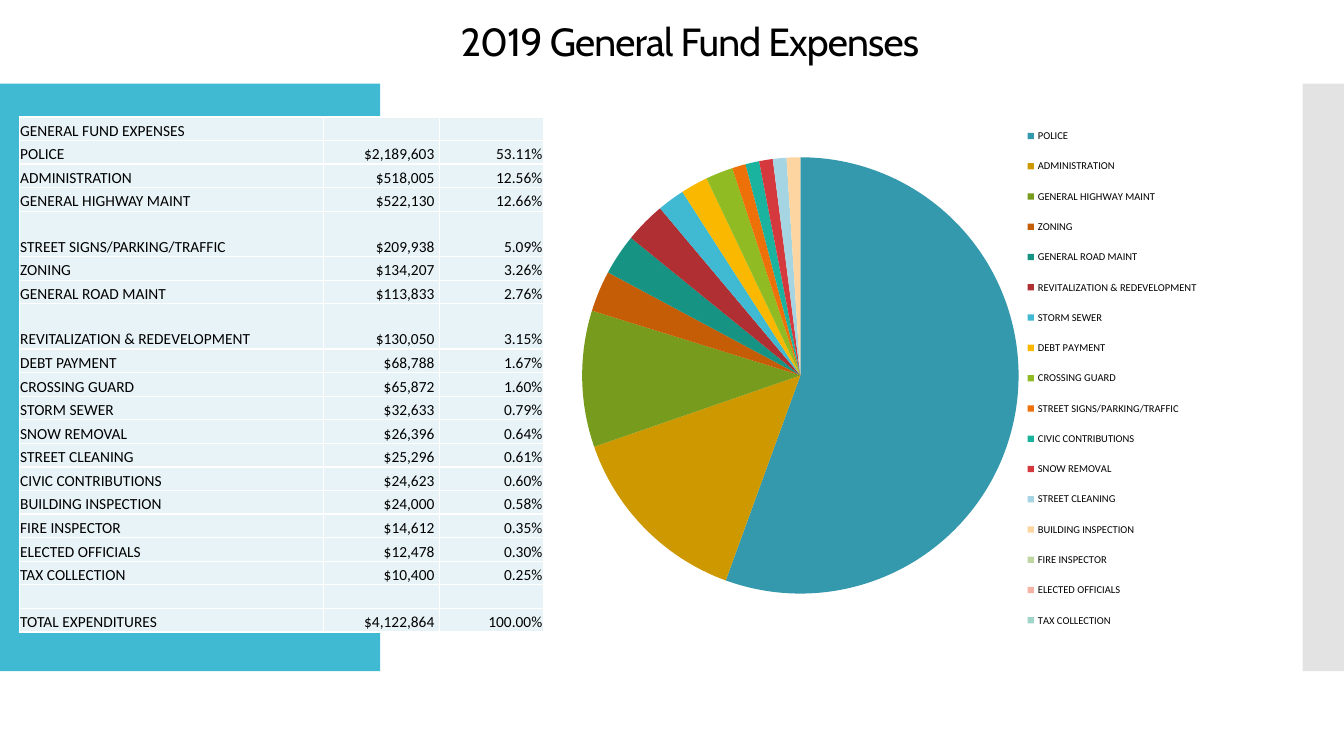
from lxml.etree import SubElement
from pptx import Presentation
from pptx.chart.data import CategoryChartData
from pptx.dml.color import RGBColor
from pptx.enum.chart import XL_CHART_TYPE, XL_LEGEND_POSITION
from pptx.enum.shapes import MSO_SHAPE
from pptx.enum.text import MSO_ANCHOR, PP_ALIGN
from pptx.oxml import parse_xml
from pptx.oxml.ns import nsdecls, qn
from pptx.util import Inches, Pt

COLORS = {"ink": "000000", "white": "FFFFFF", "band": "40BAD2",
          "grey": "C8C8C8", "cell": "E8F3F7"}

ROWS = [
    ("GENERAL FUND EXPENSES", "", ""),
    ("POLICE", "$2,189,603", "53.11%"),
    ("ADMINISTRATION", "$518,005", "12.56%"),
    ("GENERAL HIGHWAY MAINT", "$522,130", "12.66%"),
    ("STREET SIGNS/PARKING/TRAFFIC", "$209,938", "5.09%"),
    ("ZONING", "$134,207", "3.26%"),
    ("GENERAL ROAD MAINT", "$113,833", "2.76%"),
    ("REVITALIZATION & REDEVELOPMENT", "$130,050", "3.15%"),
    ("DEBT PAYMENT", "$68,788", "1.67%"),
    ("CROSSING GUARD", "$65,872", "1.60%"),
    ("STORM SEWER", "$32,633", "0.79%"),
    ("SNOW REMOVAL", "$26,396", "0.64%"),
    ("STREET CLEANING", "$25,296", "0.61%"),
    ("CIVIC CONTRIBUTIONS", "$24,623", "0.60%"),
    ("BUILDING INSPECTION", "$24,000", "0.58%"),
    ("FIRE INSPECTOR", "$14,612", "0.35%"),
    ("ELECTED OFFICIALS", "$12,478", "0.30%"),
    ("TAX COLLECTION", "$10,400", "0.25%"),
    ("", "", ""),
    ("TOTAL EXPENDITURES", "$4,122,864", "100.00%"),
]
TALL = {4: 0.45, 7: 0.45}

# Category, share in percent, slice colour
SLICES = [
    ("POLICE", 55, "3599AE"),
    ("ADMINISTRATION", 14, "CE9900"),
    ("GENERAL HIGHWAY MAINT", 10, "769B1D"),
    ("ZONING", 3, "C55C06"),
    ("GENERAL ROAD MAINT", 3, "169383"),
    ("REVITALIZATION & REDEVELOPMENT", 3, "B02F32"),
    ("STORM SEWER", 2, "40BAD2"),
    ("DEBT PAYMENT", 2, "FAB900"),
    ("CROSSING GUARD", 2, "90BB23"),
    ("STREET SIGNS/PARKING/TRAFFIC", 1, "EE7008"),
    ("CIVIC CONTRIBUTIONS", 1, "1AB39F"),
    ("SNOW REMOVAL", 1, "D5393D"),
    ("STREET CLEANING", 1, "A5D5E2"),
    ("BUILDING INSPECTION", 1, "FCD5A0"),
    ("FIRE INSPECTOR", 0, "BFD6A3"),
    ("ELECTED OFFICIALS", 0, "F5B1A3"),
    ("TAX COLLECTION", 0, "9FD4C8"),
]


def rgb(code):
    return RGBColor.from_string(code)


class Deck:
    def __init__(self):
        self.prs = Presentation()
        self.prs.slide_width = Inches(13.33)
        self.prs.slide_height = Inches(7.5)
        self.slide = self.prs.slides.add_slide(self.prs.slide_layouts[6])
        self.head, self.body = "Cabin", "Calibri"

    def style(self, font, size, face):
        font.size, font.name = Pt(size), face
        font.color.rgb = rgb(COLORS["ink"])

    def rect(self, box, color, alpha=None):
        shape = self.slide.shapes.add_shape(MSO_SHAPE.RECTANGLE, *map(Inches, box))
        shape.shadow.inherit = False
        shape.fill.solid()
        shape.fill.fore_color.rgb = rgb(COLORS[color])
        shape.line.fill.background()
        if alpha:
            fill = shape.fill._xPr.find(qn("a:solidFill"))
            SubElement(fill[0], qn("a:alpha"), val=str(alpha * 1000))

    def title(self, box, text):
        frame = self.slide.shapes.add_textbox(*map(Inches, box)).text_frame
        frame.word_wrap = True
        frame.vertical_anchor = MSO_ANCHOR.TOP
        frame.margin_top = Inches(0.09)
        para = frame.paragraphs[0]
        para.line_spacing = 0.9
        run = para.add_run()
        run.text = text
        self.style(run.font, 28, self.head)
        run.font._element.set("spc", "-60")

    def cell(self, cell, text, col):
        cell.vertical_anchor = MSO_ANCHOR.BOTTOM
        cell.margin_left = cell.margin_top = Inches(0.01)
        cell.margin_right = Inches(0.05 if col == 1 else 0.01)
        cell.margin_bottom = 0
        props = cell._tc.get_or_add_tcPr()
        for side in ("lnL", "lnR", "lnT", "lnB"):
            props.append(parse_xml(
                f'<a:{side} {nsdecls("a")} w="12700"><a:solidFill>'
                f'<a:srgbClr val="{COLORS["white"]}"/></a:solidFill></a:{side}>'))
        cell.fill.solid()
        cell.fill.fore_color.rgb = rgb(COLORS["cell"])
        para = cell.text_frame.paragraphs[0]
        para.alignment = PP_ALIGN.RIGHT if col else PP_ALIGN.LEFT
        if text:
            run = para.add_run()
            run.text = text
            self.style(run.font, 11, self.body)
        else:
            SubElement(para._p, qn("a:endParaRPr"), sz="1100")

    def table(self, box, rows, widths, tall):
        frame = self.slide.shapes.add_table(len(rows), len(widths), *map(Inches, box))
        table = frame.table
        table.first_row = table.horz_banding = False
        for col, width in zip(table.columns, widths):
            col.width = Inches(width)
        short = (box[3] - sum(tall.values())) / (len(rows) - len(tall))
        for r, row in enumerate(rows):
            table.rows[r].height = Inches(tall.get(r, short))
            for c, text in enumerate(row):
                self.cell(table.cell(r, c), text, c)

    def layout(self, part, place, inner=False):
        old = part.find(qn("c:layout"))
        if old is not None:
            part.remove(old)
        target = '<c:layoutTarget val="inner"/>' if inner else ""
        modes = "".join(f'<c:{k}Mode val="edge"/>' for k in "xy")
        sizes = "".join(f'<c:{k} val="{v}"/>' for k, v in zip("xywh", place))
        node = parse_xml(f'<c:layout {nsdecls("c")}><c:manualLayout>{target}'
                         f'{modes}{sizes}</c:manualLayout></c:layout>')
        part.insert(0 if inner else 1, node)

    def pie(self, box, slices, plot, key):
        data = CategoryChartData()
        names, shares, tints = zip(*slices)
        data.categories = names
        data.add_series("Series 1", shares)
        chart = self.slide.shapes.add_chart(
            XL_CHART_TYPE.PIE, *map(Inches, box), data).chart
        self.style(chart.font, 10, self.body)
        chart.has_title = False
        chart.plots[0].vary_by_categories = True
        for i, tint in enumerate(tints):
            point = chart.plots[0].series[0].points[i].format
            point.fill.solid()
            point.fill.fore_color.rgb = rgb(tint)
            point.line.fill.background()
        chart.has_legend = True
        legend = chart.legend
        legend.position = XL_LEGEND_POSITION.RIGHT
        legend.include_in_layout = False
        self.style(legend.font, 7.5, self.body)
        self.layout(chart._chartSpace.chart.plotArea, plot, inner=True)
        self.layout(legend._element, key)


def main():
    deck = Deck()
    # Side bands
    deck.rect((0, 0.83, 3.77, 5.83), "band")
    deck.rect((12.92, 0.83, 0.41, 5.83), "grey", alpha=50)
    # Heading
    deck.title((4.47, 0.13, 5.54, 1.03), "2019 General Fund Expenses")
    # Expense table
    deck.table((0.19, 1.16, 5.2, 5.11), ROWS, (3.02, 1.15, 1.03), TALL)
    # Expense shares
    deck.pie((5.62, 0.95, 6.44, 5.55), SLICES,
             plot=(0.02, 0.11, 0.68, 0.78), key=(0.68, 0.03, 0.32, 0.95))
    deck.prs.save("out.pptx")


if __name__ == "__main__":
    main()
